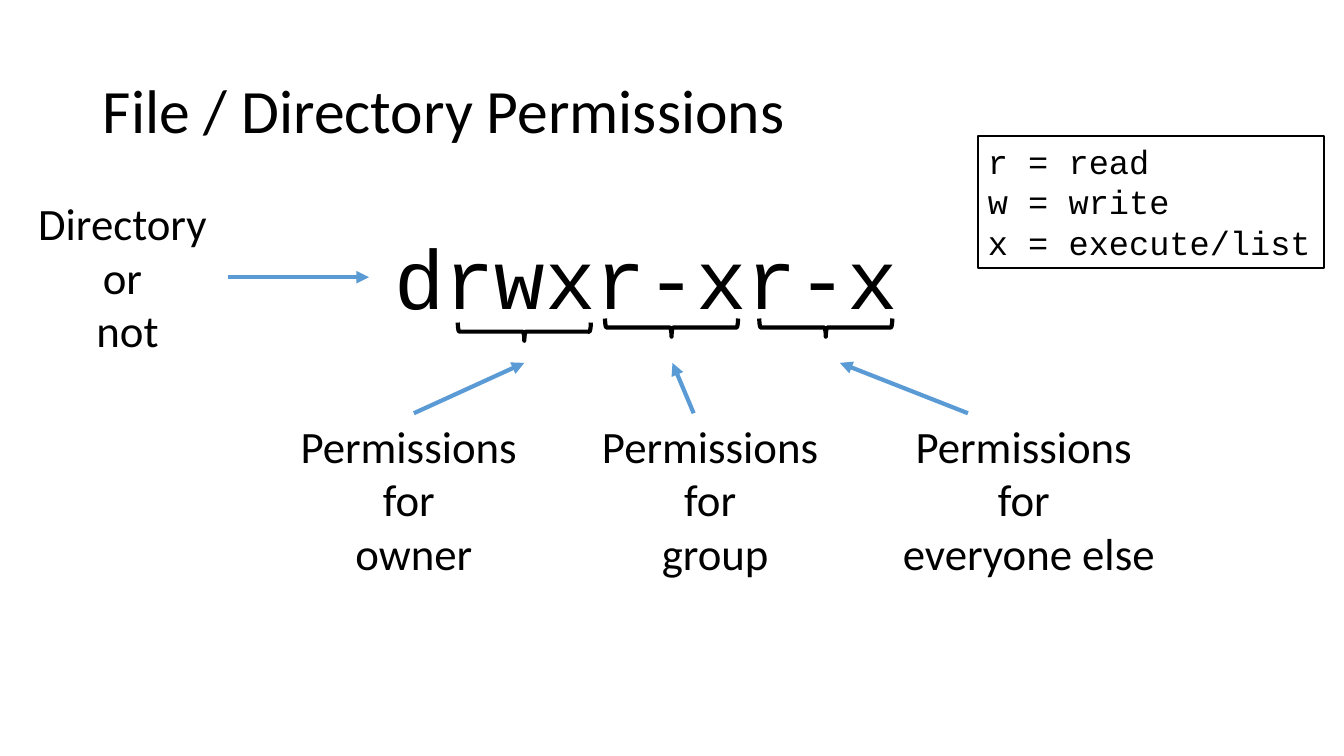
from dataclasses import dataclass

from pptx import Presentation
from pptx.dml.color import RGBColor
from pptx.enum.shapes import MSO_CONNECTOR, MSO_SHAPE
from pptx.enum.text import MSO_ANCHOR, MSO_AUTO_SIZE, PP_ALIGN
from pptx.oxml.ns import qn
from pptx.util import Inches, Pt
from lxml.etree import SubElement


@dataclass(frozen=True)
class Theme:
    ink: RGBColor = RGBColor(0x00, 0x00, 0x00)
    arrow: RGBColor = RGBColor(0x5B, 0x9B, 0xD5)
    body_font: str = "Calibri"
    code_font: str = "Courier New"
    title_size: Pt = Pt(44)
    mode_size: Pt = Pt(60)
    label_size: Pt = Pt(32)
    legend_size: Pt = Pt(24)
    heavy_line: Pt = Pt(3)
    legend_line: Pt = Pt(1.5)


theme = Theme()


def write_lines(shape, lines, font_name, size, alignment=PP_ALIGN.LEFT):
    """Fill a shape with one paragraph per line, without wrapping."""
    frame = shape.text_frame
    frame.word_wrap = False
    frame.auto_size = MSO_AUTO_SIZE.SHAPE_TO_FIT_TEXT
    for index, line in enumerate(lines):
        paragraph = frame.paragraphs[0] if index == 0 else frame.add_paragraph()
        paragraph.alignment = alignment
        run = paragraph.add_run()
        run.text = line
        run.font.name = font_name
        run.font.size = size
        run.font.color.rgb = theme.ink


presentation = Presentation()
presentation.slide_width = Inches(13.33)
presentation.slide_height = Inches(7.5)
slide = presentation.slides.add_slide(presentation.slide_layouts[5])
shapes = slide.shapes

# Title
title = shapes.title
title.left, title.top = Inches(0.92), Inches(0.4)
title.width, title.height = Inches(11.5), Inches(1.45)
write_lines(title, ["File / Directory Permissions"], theme.body_font, theme.title_size)
title.text_frame.word_wrap = True
title.text_frame.auto_size = MSO_AUTO_SIZE.NONE
title.text_frame.vertical_anchor = MSO_ANCHOR.MIDDLE
title.text_frame.paragraphs[0].line_spacing = 0.9

# Permission string
mode = shapes.add_textbox(Inches(3.81), Inches(2.19), Inches(5.25), Inches(1.11))
write_lines(mode, ["drwxr-xr-x"], theme.code_font, theme.mode_size)

# Labels around the string
labels = {}
for name, left, top, width, lines in [
    ("directory", 0.27, 1.89, 1.99, ["Directory ", "or ", "not"]),
    ("owner", 2.87, 4.1, 2.47, ["Permissions ", "for ", "owner"]),
    ("group", 5.86, 4.1, 2.47, ["Permissions ", "for ", "group"]),
    ("everyone", 8.85, 4.1, 2.71, ["Permissions ", "for ", "everyone else"]),
]:
    label = shapes.add_textbox(Inches(left), Inches(top), Inches(width), Inches(1.72))
    write_lines(label, lines, theme.body_font, theme.label_size, PP_ALIGN.CENTER)
    labels[name] = label

# Braces under each group of three letters
for left, top in [(5.11, 2.63), (6.57, 2.59), (8.1, 2.59)]:
    brace = shapes.add_shape(
        MSO_SHAPE.RIGHT_BRACE, Inches(left), Inches(top), Inches(0.18), Inches(1.32)
    )
    brace.rotation = 90
    brace.shadow.inherit = False
    brace.fill.background()
    brace.line.color.rgb = theme.ink
    brace.line.width = theme.heavy_line

# Arrows; a label and its side are given where the arrow starts at that side's middle
for start_x, start_y, end_x, end_y, source, side in [
    (2.26, 2.75, 3.66, 2.75, "directory", 3),
    (4.1, 4.1, 5.2, 3.6, "owner", 0),
    (6.88, 4.1, 6.67, 3.6, None, None),
    (9.6, 4.1, 8.33, 3.6, None, None),
]:
    arrow = shapes.add_connector(
        MSO_CONNECTOR.STRAIGHT,
        Inches(start_x), Inches(start_y), Inches(end_x), Inches(end_y),
    )
    if source:
        arrow.begin_connect(labels[source], side)
    arrow.line.color.rgb = theme.arrow
    arrow.line.width = theme.heavy_line
    SubElement(arrow.line._get_or_add_ln(), qn("a:tailEnd"), type="triangle")
    SubElement(arrow._element.spPr, qn("a:effectLst"))

# Legend
legend = shapes.add_shape(
    MSO_SHAPE.RECTANGLE, Inches(9.7), Inches(1.35), Inches(3.43), Inches(1.31)
)
legend.shadow.inherit = False
legend.fill.background()
legend.line.color.rgb = theme.ink
legend.line.width = theme.legend_line
write_lines(
    legend, ["r = read", "w = write", "x = execute/list"],
    theme.code_font, theme.legend_size,
)
legend.text_frame.vertical_anchor = MSO_ANCHOR.TOP

presentation.save("out.pptx")
